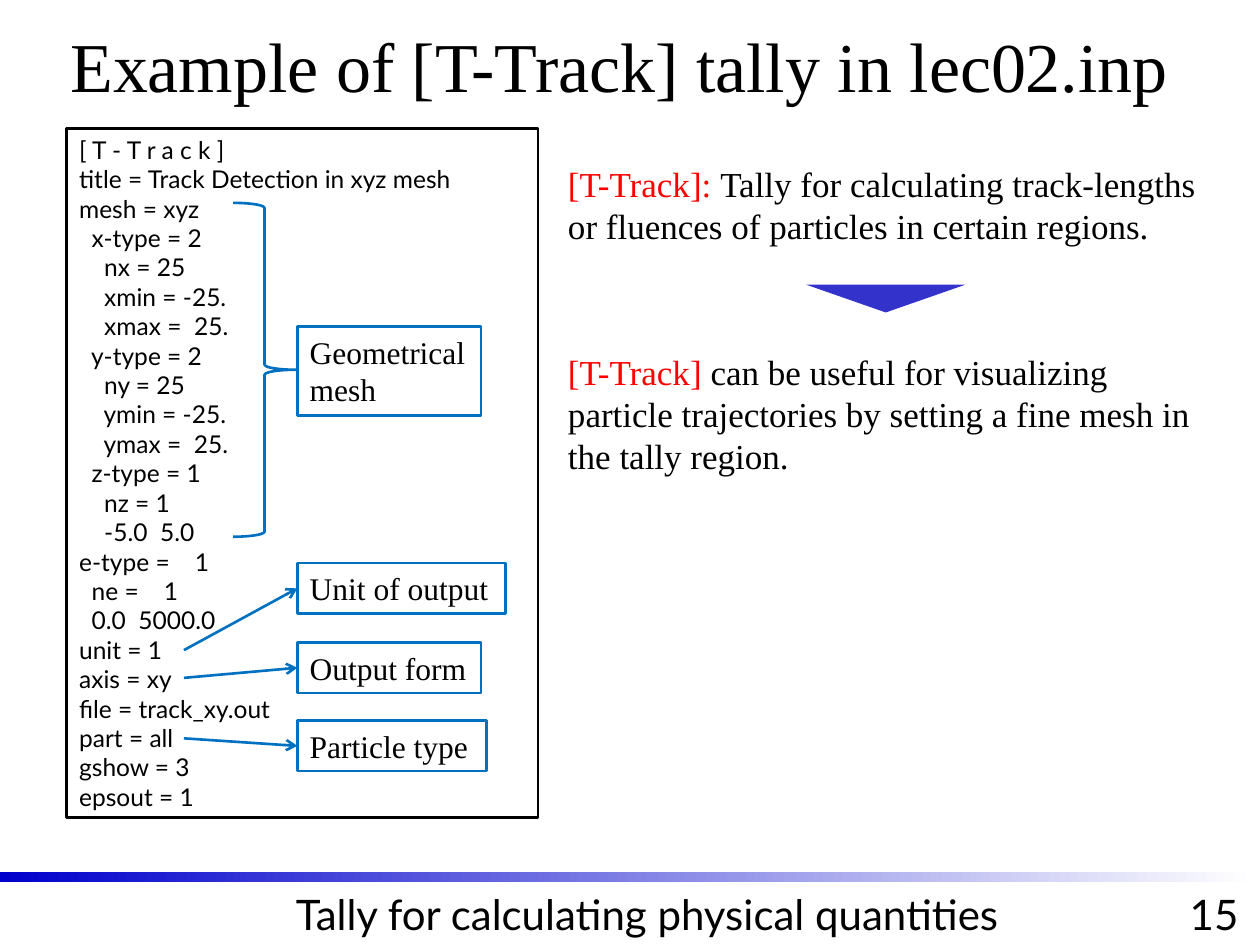
from typing import NamedTuple

from lxml import etree
from pptx import Presentation
from pptx.dml.color import RGBColor
from pptx.enum import shapes as sh, text as tx
from pptx.oxml import ns
from pptx.util import Inches, Pt

BLACK = RGBColor(0, 0, 0)
WHITE = RGBColor(255, 255, 255)
RED = RGBColor(255, 0, 0)
BLUE = RGBColor(0x00, 0x70, 0xC0)
NAVY = RGBColor(0x00, 0x00, 0xCC)
WEDGE = RGBColor(0x33, 0x33, 0xCC)
SERIF, SANS = "Times New Roman", "Lato"
NOTE_X, CODE_X = 2.36, 1.46

CODE = """[ T - T r a c k ]
title = Track Detection in xyz mesh
mesh = xyz
  x-type = 2
    nx = 25
    xmin = -25.
    xmax =  25.
  y-type = 2
    ny = 25
    ymin = -25.
    ymax =  25.
  z-type = 1
    nz = 1
    -5.0  5.0
e-type =    1
  ne =    1
  0.0  5000.0
unit = 1
axis = xy
file = track_xy.out
part = all
gshow = 3
epsout = 1"""


class Box(NamedTuple):
    x: float
    y: float
    w: float
    h: float


class Note(NamedTuple):
    label: str
    y: float
    w: float
    h: float = 0.4
    code_y: float | None = None


NOTES = [
    Note("Geometrical mesh", 2.59, 1.46, h=0.71),
    Note("Unit of output", 4.47, 1.65, code_y=5.16),
    Note("Output form", 5.1, 1.46, code_y=5.38),
    Note("Particle type", 5.72, 1.5, code_y=5.86),
]


def write(shape, *runs: tuple[str, RGBColor], size: float, font: str = SERIF,
          align=tx.PP_ALIGN.LEFT, anchor=tx.MSO_ANCHOR.TOP, wrap: bool = True) -> None:
    frame = shape.text_frame
    frame.word_wrap = wrap
    frame.vertical_anchor = anchor
    para = frame.paragraphs[0]
    para.alignment = align
    for words, color in runs:
        for i, line in enumerate(words.split("\n")):
            if i:
                para = frame.add_paragraph()
                para.alignment = align
            run = para.add_run()
            run.text = line
            run.font.name = font
            run.font.size = Pt(size)
            run.font.color.rgb = color


def label(slide, box: Box, *runs: tuple[str, RGBColor], **style) -> None:
    write(slide.shapes.add_textbox(*map(Inches, box)), *runs, **style)


def draw(slide, kind, box: Box, fill: RGBColor | None = None,
         line: RGBColor | None = None):
    shape = slide.shapes.add_shape(kind, *map(Inches, box))
    shape.shadow.inherit = False
    if fill is None:
        shape.fill.background()
    else:
        shape.fill.solid()
        shape.fill.fore_color.rgb = fill
    if line is None:
        shape.line.fill.background()
    else:
        shape.line.color.rgb = line
        shape.line.width = Pt(1.5)
    return shape


def arrow(slide, x: float, y: float, end_x: float, end_y: float) -> None:
    line = slide.shapes.add_connector(
        sh.MSO_CONNECTOR.STRAIGHT, *map(Inches, (x, y, end_x, end_y)))
    line.line.color.rgb = BLUE
    line.line.width = Pt(1.5)
    etree.SubElement(line.line._get_or_add_ln(), ns.qn("a:headEnd"), type="arrow")
    etree.SubElement(line._element.spPr, ns.qn("a:effectLst"))


def callout(slide, note: Note) -> None:
    box = Box(NOTE_X, note.y, note.w, note.h)
    shape = draw(slide, sh.MSO_SHAPE.RECTANGLE, box, WHITE, BLUE)
    write(shape, (note.label, BLACK), size=18)
    if note.code_y is not None:
        arrow(slide, NOTE_X, note.y + note.h / 2, CODE_X, note.code_y)


def footer(slide) -> None:
    bar = draw(slide, sh.MSO_SHAPE.RECTANGLE, Box(0, 6.92, 9.96, 0.08), NAVY)
    bar.fill.gradient()
    bar.fill.gradient_angle = 0
    for stop, color, place in zip(bar.fill.gradient_stops, (NAVY, WHITE), (0, 1)):
        stop.color.rgb = color
        stop.position = place
    style = dict(size=24, font=SANS, align=tx.PP_ALIGN.CENTER)
    label(slide, Box(9.24, 7, 0.79, 0.5), ("15", BLACK), **style)
    label(slide, Box(2.12, 7, 6.03, 0.51),
          ("Tally for calculating physical quantities", BLACK), **style)


def main() -> None:
    deck = Presentation()
    deck.slide_width, deck.slide_height = Inches(10), Inches(7.5)
    slide = deck.slides.add_slide(deck.slide_layouts[6])

    footer(slide)
    label(slide, Box(0.46, 0.13, 9.08, 0.77),
          ("Example of [T-Track] tally in lec02.inp", BLACK), size=40, wrap=False)
    panel = draw(slide, sh.MSO_SHAPE.RECTANGLE, Box(0.53, 1.02, 3.74, 5.47),
                 WHITE, BLACK)
    write(panel, (CODE, BLACK), size=14, font=SANS)

    brace = draw(slide, sh.MSO_SHAPE.RIGHT_BRACE, Box(1.85, 1.61, 0.5, 2.65),
                 line=BLUE)
    brace.adjustments[0] = 0.08
    brace.adjustments[1] = 0.5
    for note in NOTES:
        callout(slide, note)

    wedge = draw(slide, sh.MSO_SHAPE.ISOSCELES_TRIANGLE,
                 Box(6.4, 2.26, 1.26, 0.22), WEDGE)
    wedge.rotation = 180
    label(slide, Box(4.41, 1.24, 5.24, 0.77), ("[T-Track]: ", RED),
          ("Tally for calculating track-lengths or fluences of particles "
           "in certain regions.", BLACK), size=20)
    label(slide, Box(4.41, 2.73, 5.24, 1.1), ("[T-Track] ", RED),
          ("can be useful for visualizing particle trajectories by setting "
           "a fine mesh in the tally region.", BLACK), size=20)
    deck.save("out.pptx")


if __name__ == "__main__":
    main()
